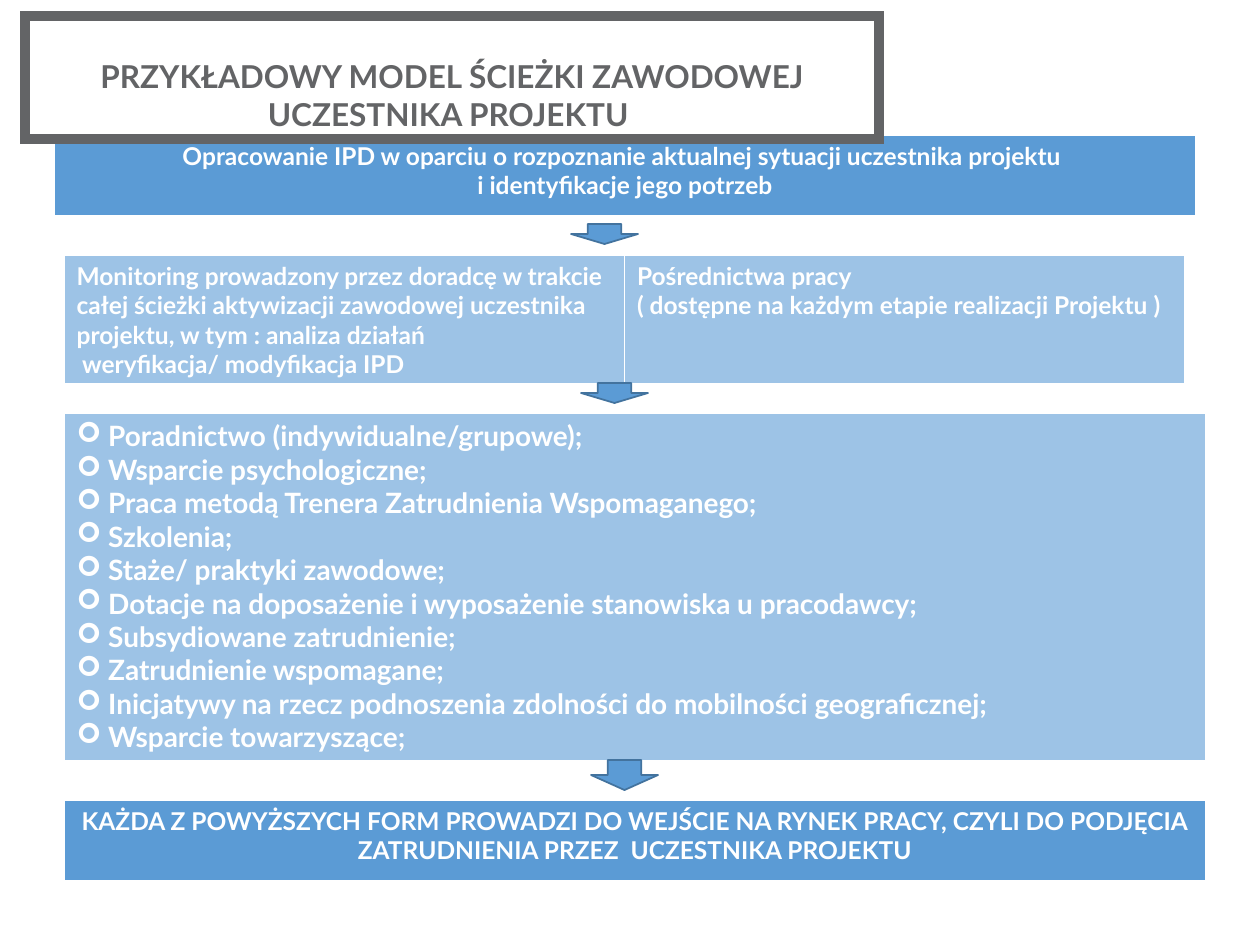
from dataclasses import dataclass
from lxml.etree import SubElement as Sub
from pptx import Presentation
from pptx.dml.color import RGBColor as RGB
from pptx.enum.shapes import MSO_SHAPE as Shape
from pptx.enum.text import MSO_ANCHOR as Anchor, MSO_AUTO_SIZE as Auto, PP_ALIGN as Align
from pptx.oxml.ns import qn
from pptx.util import Emu, Pt


@dataclass(frozen=True)
class Theme:
    font: str = "Lato"
    white: str = "FFFFFF"
    blue: str = "5B9BD5"
    pale: str = "9DC3E6"
    edge: str = "43739E"
    gray: str = "636466"
    head: int = 18
    list: int = 16
    text: int = 14


T = Theme()
SCALE = 914400 / 126

GOAL = "Opracowanie IPD w oparciu o rozpoznanie aktualnej sytuacji uczestnika projektu \ni identyfikacje jego potrzeb"
WATCH = [
    "Monitoring prowadzony przez doradcę w trakcie całej ścieżki aktywizacji zawodowej uczestnika projektu, w tym : analiza działań",
    " weryfikacja/ modyfikacja IPD",
]
JOBS = ["Pośrednictwa pracy", "( dostępne na każdym etapie realizacji Projektu )"]
FORMS = [
    " Poradnictwo (indywidualne/grupowe);",
    " Wsparcie psychologiczne;",
    " Praca metodą Trenera Zatrudnienia Wspomaganego;",
    " Szkolenia;",
    " Staże/ praktyki zawodowe;",
    " Dotacje na doposażenie i wyposażenie stanowiska u pracodawcy;",
    " Subsydiowane zatrudnienie;",
    " Zatrudnienie wspomagane;",
    " Inicjatywy na rzecz podnoszenia zdolności do mobilności geograficznej;",
    " Wsparcie towarzyszące;",
]
END = "KAŻDA Z POWYŻSZYCH FORM PROWADZI DO WEJŚCIE NA RYNEK PRACY, CZYLI DO PODJĘCIA ZATRUDNIENIA PRZEZ  UCZESTNIKA PROJEKTU"


def px(n):
    return Emu(round(n * SCALE))


def paint(fill, color):
    fill.solid()
    fill.fore_color.rgb = RGB.from_string(color)


def add_bullet(para, mark):
    props = para._p.get_or_add_pPr()
    props.set("marL", "0")
    props.set("indent", "0")
    Sub(props, qn("a:buFont"), typeface="Wingdings")
    Sub(props, qn("a:buChar"), char=mark)


def add_text(frame, lines, size, color, align=Align.LEFT, mark=None):
    for i, line in enumerate(lines):
        para = frame.add_paragraph() if i else frame.paragraphs[0]
        para.alignment = align
        para.line_spacing = 1.0
        para.space_before = para.space_after = Pt(0)
        if mark:
            add_bullet(para, mark)
        for j, part in enumerate(line.split("\n")):
            if j:
                para.add_line_break()
            run = para.add_run()
            run.text = part
            font = run.font
            font.name, font.size, font.bold = T.font, Pt(size), True
            font.color.rgb = RGB.from_string(color)


def add_edges(cell):
    props = cell._tc.get_or_add_tcPr()
    for side, width in zip("LRTB", (1, 1, 1, 3)):
        line = Sub(props, qn(f"a:ln{side}"), w=str(Pt(width)))
        Sub(Sub(line, qn("a:solidFill")), qn("a:srgbClr"), val=T.white)


def add_panel(slide, box, cells, color, size=T.text, align=Align.LEFT, mark=None):
    table = slide.shapes.add_table(1, len(cells), *map(px, box)).table
    table.first_row = table.horz_banding = False
    for cell, lines in zip(table.rows[0].cells, cells):
        add_edges(cell)
        paint(cell.fill, color)
        add_text(cell.text_frame, lines, size, T.white, align, mark)


def add_arrow(slide, left, top, high):
    arrow = slide.shapes.add_shape(Shape.DOWN_ARROW, px(left), px(top), px(67), px(high))
    arrow.shadow.inherit = False
    paint(arrow.fill, T.blue)
    paint(arrow.line.fill, T.edge)
    arrow.line.width = Pt(1)


def set_title(slide, box, text):
    title = slide.shapes.title
    title.left, title.top, title.width, title.height = map(px, box)
    title.line.width = Pt(6)
    paint(title.line.fill, T.gray)
    Sub(title.line._get_or_add_ln(), qn("a:miter"), lim="800000")
    frame = title.text_frame
    frame.word_wrap = True
    frame.auto_size = Auto.NONE
    frame.vertical_anchor = Anchor.BOTTOM
    frame.margin_top = frame.margin_bottom = px(6)
    add_text(frame, [text], T.head, T.gray, Align.CENTER)
    slide.shapes._spTree.append(title._element)


def main():
    deck = Presentation()
    deck.slide_width, deck.slide_height = px(1260), px(945)
    slide = deck.slides.add_slide(deck.slide_layouts[5])
    add_arrow(slide, 571, 224, 20)
    add_panel(slide, (64, 255, 1121, 129), [WATCH, JOBS], T.pale)
    add_panel(slide, (54, 135, 1142, 82), [[GOAL]], T.blue, align=Align.CENTER)
    add_panel(slide, (64, 413, 1142, 349), [FORMS], T.pale, T.list, mark="➢")
    add_panel(slide, (64, 800, 1142, 82), [[END]], T.blue, align=Align.CENTER)
    add_arrow(slide, 581, 383, 20)
    add_arrow(slide, 591, 760, 30)
    set_title(slide, (25, 16, 854, 123), "PRZYKŁADOWY MODEL ŚCIEŻKI ZAWODOWEJ UCZESTNIKA PROJEKTU ")
    deck.save("out.pptx")


if __name__ == "__main__":
    main()
